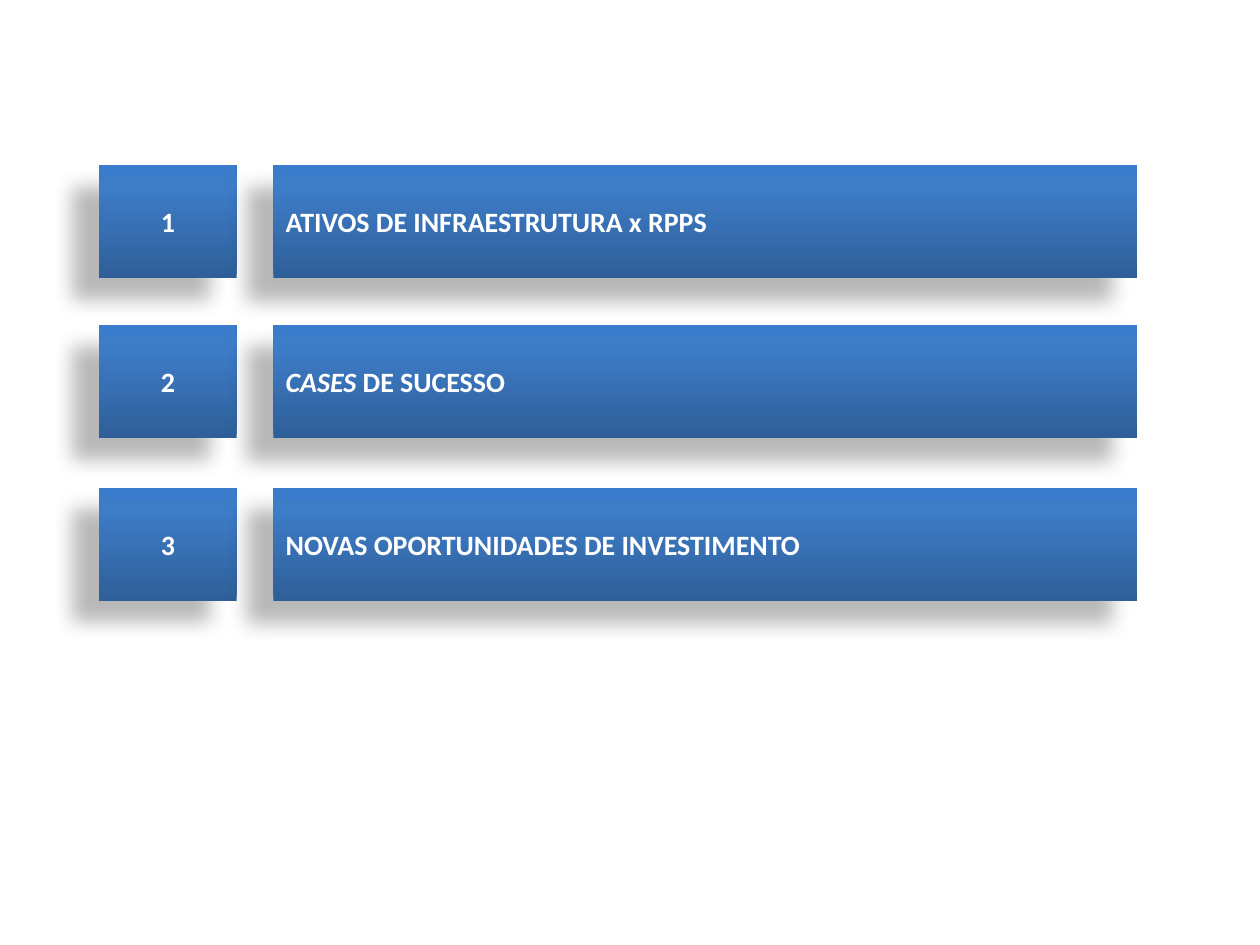
from lxml import etree
from pptx import Presentation
from pptx.dml.color import RGBColor
from pptx.enum.shapes import MSO_SHAPE
from pptx.enum.text import MSO_ANCHOR, PP_ALIGN
from pptx.oxml.ns import qn
from pptx.util import Cm, Pt

RECTANGLE = MSO_SHAPE.RECTANGLE
MIDDLE = MSO_ANCHOR.MIDDLE
CENTER, LEFT = PP_ALIGN.CENTER, PP_ALIGN.LEFT

COLORS = {
    "bottom": "2F5F99",
    "middle": "3D7CC7",
    "top": "3A7CCB",
    "shadow": "000000",
    "text": "FFFFFF",
}
GRADIENT_STOPS = [(0, "bottom"), (80, "middle"), (100, "top")]
SHADOW = {"blurRad": Pt(11.8), "dist": Pt(19.7), "dir": 141 * 60000,
          "algn": "ctr", "rotWithShape": 0}
TEXT_FORMAT = {"name": "Calibri", "size": Pt(16), "bold": True}


def add_element(parent, tag, **attributes):
    values = {name: str(value) for name, value in attributes.items()}
    return etree.SubElement(parent, qn(tag), values)


def add_block(slide, left, top, width, alignment, runs):
    shape = slide.shapes.add_shape(RECTANGLE, Cm(left), Cm(top), Cm(width), Cm(2.28))
    shape.line.fill.background()
    shape.fill.gradient()
    shape.fill.gradient_angle = 90
    properties = shape.element.spPr
    stops = properties.find(".//" + qn("a:gsLst"))
    for stop in list(stops):
        stops.remove(stop)
    for position, color in GRADIENT_STOPS:
        stop = add_element(stops, "a:gs", pos=position * 1000)
        add_element(stop, "a:srgbClr", val=COLORS[color])

    shape.shadow.inherit = False
    shadow = add_element(properties.find(qn("a:effectLst")), "a:outerShdw", **SHADOW)
    shadow_color = add_element(shadow, "a:srgbClr", val=COLORS["shadow"])
    add_element(shadow_color, "a:alpha", val=28000)

    shape.text_frame.vertical_anchor = MIDDLE
    paragraph = shape.text_frame.paragraphs[0]
    paragraph.alignment = alignment
    for text, italic in runs:
        run = paragraph.add_run()
        run.text = text
        for name, value in TEXT_FORMAT.items():
            setattr(run.font, name, value)
        run.font.italic = italic
        run.font.color.rgb = RGBColor.from_string(COLORS["text"])


presentation = Presentation()
presentation.slide_width = Cm(25.4)
presentation.slide_height = Cm(19.05)
slide = presentation.slides.add_slide(presentation.slide_layouts[6])

topics = [
    (3.33, [("ATIVOS DE INFRAESTRUTURA x RPPS", False)]),
    (6.55, [("CASES", True), (" DE SUCESSO", False)]),
    (9.83, [("NOVAS OPORTUNIDADES DE INVESTIMENTO", False)]),
]
for number, (top, title) in enumerate(topics, start=1):
    add_block(slide, 2, top, 2.77, CENTER, [(str(number), False)])
    add_block(slide, 5.51, top, 17.42, LEFT, title)

presentation.save("out.pptx")
